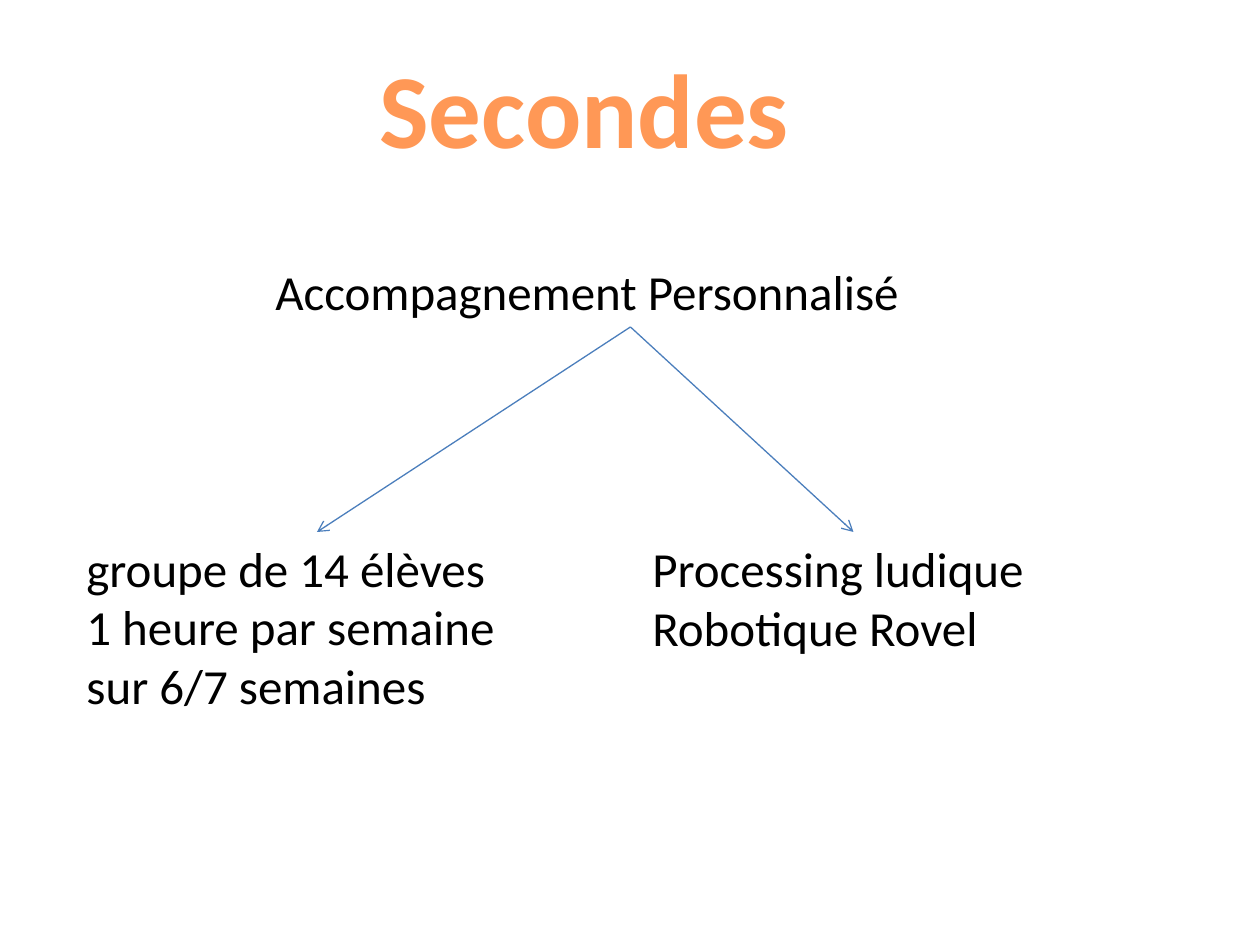
from lxml import etree
from pptx import Presentation
from pptx.dml.color import RGBColor
from pptx.enum.shapes import MSO_CONNECTOR
from pptx.enum.text import MSO_AUTO_SIZE
from pptx.oxml.ns import qn
from pptx.util import Pt

PX = 914400 // 126
BLACK = RGBColor(0x00, 0x00, 0x00)
ORANGE = RGBColor(0xFF, 0x98, 0x56)
BLUE = RGBColor(0x4B, 0x7E, 0xBC)
GROW = MSO_AUTO_SIZE.SHAPE_TO_FIT_TEXT
STRAIGHT = MSO_CONNECTOR.STRAIGHT
TOP, BOTTOM = 0, 2


def add_text(slide, box, lines, size=28, color=BLACK, bold=False):
    """Add a wrapped text box with one paragraph per line."""
    shape = slide.shapes.add_textbox(*(n * PX for n in box))
    frame = shape.text_frame
    frame.word_wrap = True
    frame.auto_size = GROW
    frame.text = "\n".join(lines)
    for para in frame.paragraphs:
        font = para.font
        font.name = "Calibri"
        font.size = Pt(size)
        font.bold = bold
        font.color.rgb = color
    return shape


def add_arrow(slide, start, end):
    """Join the bottom of one box to the top of another with an arrow."""
    arrow = slide.shapes.add_connector(STRAIGHT, 0, 0, 0, 0)
    arrow.begin_connect(start, BOTTOM)
    arrow.end_connect(end, TOP)
    arrow.line.color.rgb = BLUE
    arrow.line.width = Pt(0.75)
    props = arrow.line._get_or_add_ln()
    etree.SubElement(props, qn("a:tailEnd"), type="arrow")
    etree.SubElement(arrow._element.spPr, qn("a:effectLst"))


def main():
    """Build the slide and save it."""
    deck = Presentation()
    deck.slide_width = 1260 * PX
    deck.slide_height = 945 * PX
    slide = deck.slides.add_slide(deck.slide_layouts[6])
    add_text(slide, (367, 37, 525, 140), ["Secondes"], 60, ORANGE, True)
    theme = add_text(slide, (263, 255, 735, 72), ["Accompagnement Personnalisé"])
    group = add_text(slide, (74, 532, 486, 190),
                     ["groupe de 14 élèves", "1 heure par semaine sur 6/7 semaines"])
    topics = add_text(slide, (640, 532, 427, 131),
                      ["Processing ludique", "Robotique Rovel"])
    for target in (group, topics):
        add_arrow(slide, theme, target)
    deck.save("out.pptx")


if __name__ == "__main__":
    main()
